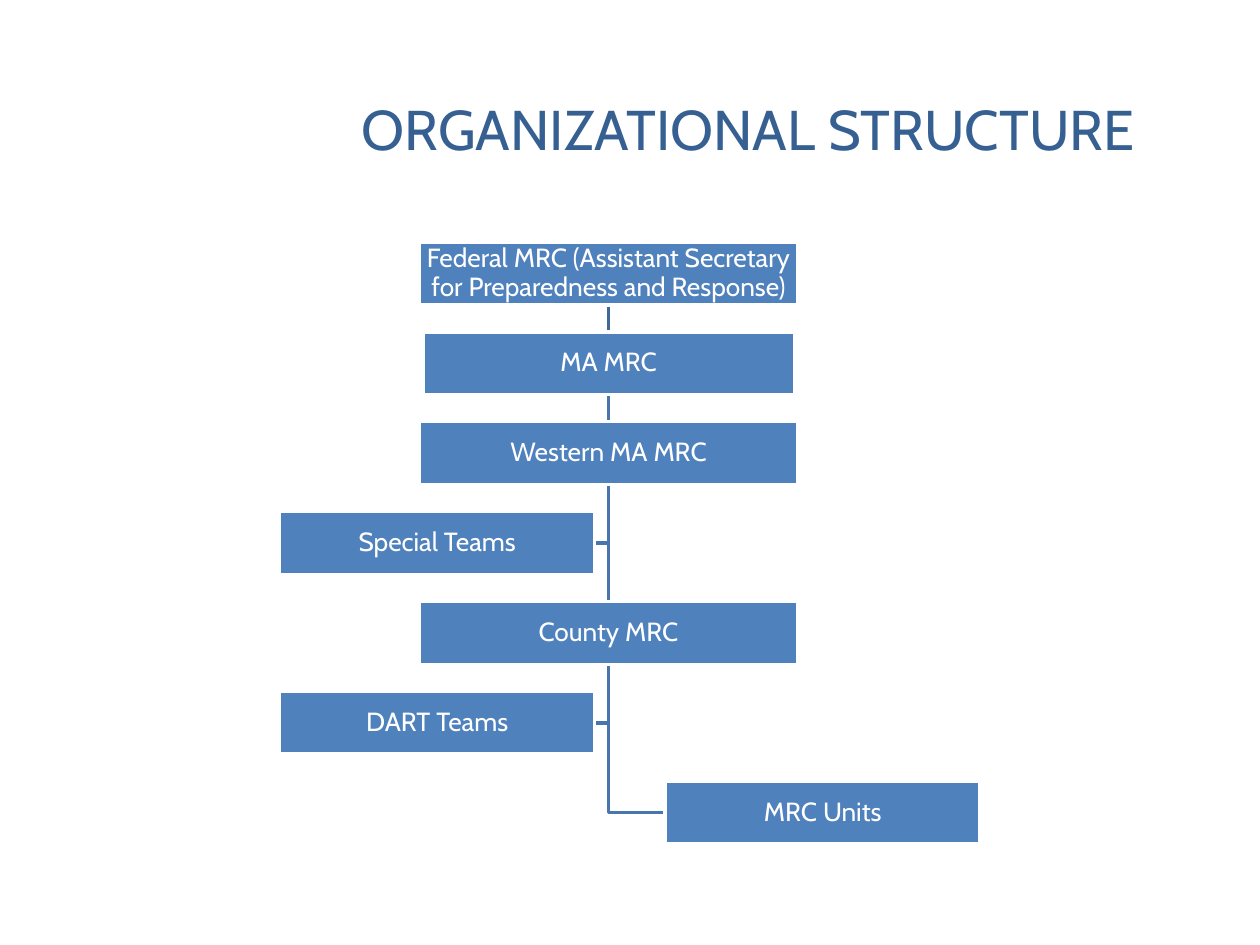
from pptx import Presentation
from pptx.dml.color import RGBColor
from pptx.enum.shapes import MSO_CONNECTOR, MSO_SHAPE
from pptx.enum.text import MSO_ANCHOR, PP_ALIGN
from pptx.oxml.ns import qn
from pptx.util import Inches, Pt

STRAIGHT = MSO_CONNECTOR.STRAIGHT
RECTANGLE = MSO_SHAPE.RECTANGLE
MIDDLE = MSO_ANCHOR.MIDDLE
CENTER = PP_ALIGN.CENTER

WHITE = RGBColor(0xFF, 0xFF, 0xFF)
TITLE_BLUE = RGBColor(0x37, 0x60, 0x92)
BOX_BLUE = RGBColor(0x4F, 0x81, 0xBD)
LINE_BLUE = RGBColor(0x48, 0x75, 0xAC)
TOP_LINE_BLUE = RGBColor(0x3F, 0x67, 0x97)
FONT = "Cabin"

ROW_COUNT = 7
BOX_HEIGHT = Inches(0.5)
TRUNK_OFFSET = Inches(2.61)
MAIN_WIDTH = Inches(3)
STATE_WIDTH = Inches(2.95)
SIDE_WIDTH = Inches(2.5)


def write_text(shape, text, size, color):
    """Put one centred line of styled text in a shape."""
    frame = shape.text_frame
    frame.word_wrap = True
    frame.vertical_anchor = MIDDLE
    frame.text = text
    paragraph = frame.paragraphs[0]
    paragraph.alignment = CENTER
    font = paragraph.runs[0].font
    font.name, font.size, font.color.rgb = FONT, Pt(size), color
    return frame, paragraph


def add_title(slide, left, top, width, height):
    """Add the slide title in the given box."""
    title = slide.shapes.add_textbox(left, top, width, height)
    write_text(title, "ORGANIZATIONAL STRUCTURE", 32, TITLE_BLUE)


def add_unit(slide, text, left, top, width):
    """Add one box of the organization chart."""
    unit = slide.shapes.add_shape(RECTANGLE, left, top, width, BOX_HEIGHT)
    unit.shadow.inherit = False
    unit.fill.solid()
    unit.fill.fore_color.rgb = BOX_BLUE
    unit.line.color.rgb = WHITE
    unit.line.width = Pt(2)
    frame, paragraph = write_text(unit, text, 15, WHITE)
    frame.margin_left = frame.margin_right = Inches(0.01)
    frame.margin_top = frame.margin_bottom = Inches(0.01)
    paragraph.line_spacing = 0.9
    return unit


def style_link(slide, link, color):
    """Style a link line and send it behind the boxes."""
    link.line.color.rgb = color
    link.line.width = Pt(2)
    slide.shapes._spTree.insert(2, link._element)


def link_down(slide, parent, child, color=LINE_BLUE):
    """Join a parent's bottom to a child's top."""
    link = slide.shapes.add_connector(STRAIGHT, 0, 0, 0, 0)
    link.begin_connect(parent, 2)
    link.end_connect(child, 0)
    properties = link._element.spPr
    style_link(slide, link, color)
    properties.append(properties.makeelement(qn("a:effectLst"), {}))


def link_side(slide, parent, child):
    """Join a parent's bottom to the facing side of a child."""
    trunk = parent.left + parent.width // 2
    middle = child.top + child.height // 2
    side = child.left if child.left > trunk else child.left + child.width
    builder = slide.shapes.build_freeform(trunk, parent.top + parent.height)
    builder.add_line_segments([(trunk, middle), (side, middle)], close=False)
    link = builder.convert_to_shape()
    link.shadow.inherit = False
    link.fill.background()
    style_link(slide, link, LINE_BLUE)


def add_organization_chart(slide, left, top, width, height):
    """Add the boxes in evenly spaced rows and link them."""
    pitch = (height - BOX_HEIGHT) / (ROW_COUNT - 1)
    trunk = left + TRUNK_OFFSET

    def add_row(row, text, box_width, box_left=None):
        """Add a box in a row, centred on the trunk by default."""
        if box_left is None:
            box_left = trunk - box_width // 2
        return add_unit(slide, text, box_left, round(top + row * pitch), box_width)

    federal = add_row(
        0, "Federal MRC (Assistant Secretary for Preparedness and Response)", MAIN_WIDTH)
    state = add_row(1, "MA MRC", STATE_WIDTH)
    western = add_row(2, "Western MA MRC", MAIN_WIDTH)
    special_teams = add_row(3, "Special Teams", SIDE_WIDTH, left)
    county = add_row(4, "County MRC", MAIN_WIDTH)
    dart_teams = add_row(5, "DART Teams", SIDE_WIDTH, left)
    local_units = add_row(6, "MRC Units", SIDE_WIDTH, left + width - SIDE_WIDTH)

    link_down(slide, federal, state, TOP_LINE_BLUE)
    link_down(slide, state, western)
    link_down(slide, western, county)
    link_side(slide, western, special_teams)
    link_side(slide, county, dart_teams)
    link_side(slide, county, local_units)


def main():
    """Build and save the presentation."""
    presentation = Presentation()
    presentation.slide_width = Inches(10)
    presentation.slide_height = Inches(7.5)
    slide = presentation.slides.add_slide(presentation.slide_layouts[6])
    add_title(slide, Inches(2.38), Inches(0.45), Inches(7.12), Inches(1.14))
    add_organization_chart(slide, Inches(2.22), Inches(1.92), Inches(5.56), Inches(4.78))
    presentation.save("out.pptx")


if __name__ == "__main__":
    main()
